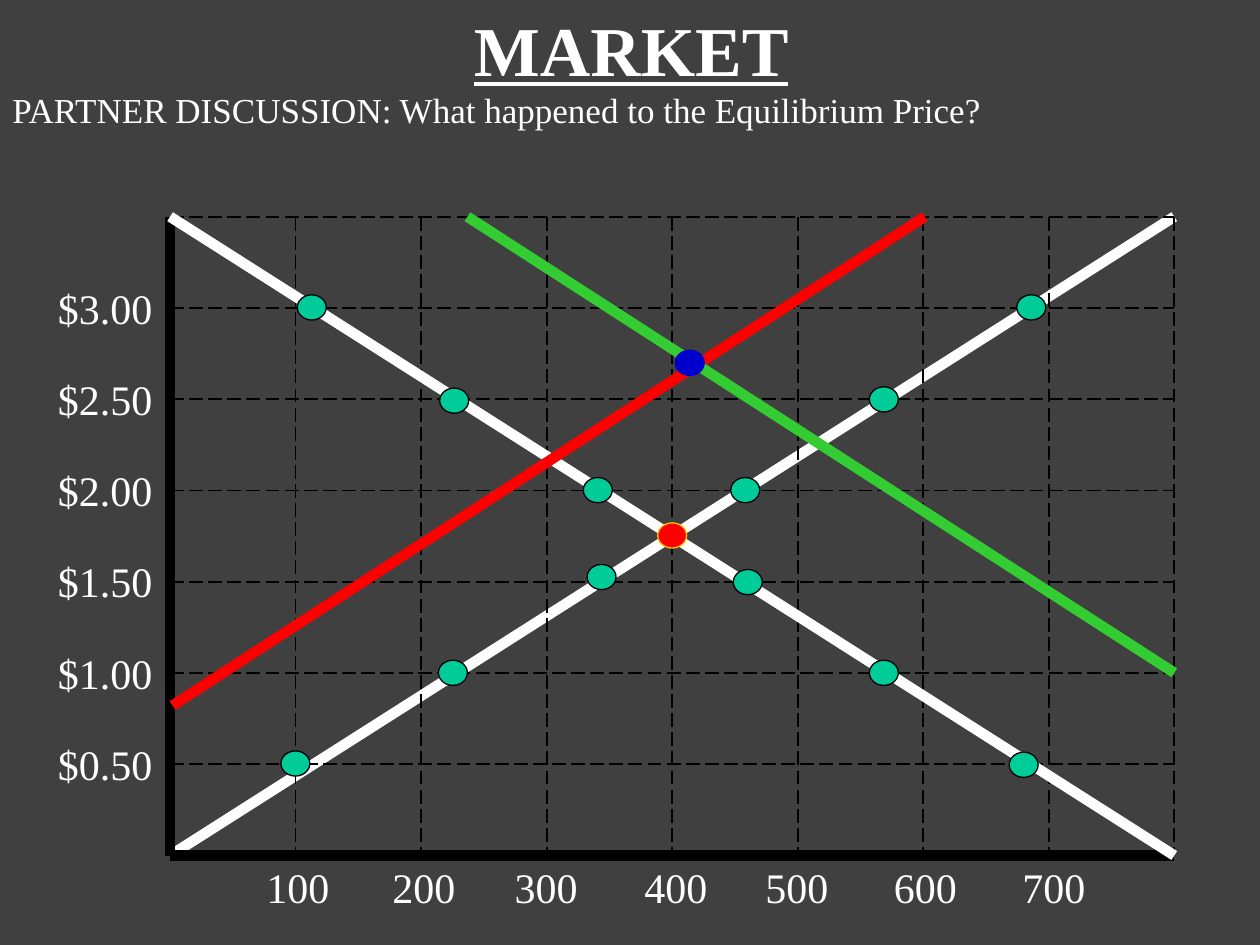
import pptx
import pptx.dml.color
import pptx.enum.dml
import pptx.enum.shapes
import pptx.enum.text
import pptx.oxml.ns
import pptx.util
from lxml import etree

Inches = pptx.util.Inches
Pt = pptx.util.Pt
ALIGN = pptx.enum.text.PP_ALIGN

COLORS = {
    "background": "404040",
    "text": "FFFFFF",
    "curve": "FFFFFF",
    "axis": "000000",
    "point": "00CC99",
    "old_equilibrium": "FF0000",
    "old_outline": "FFC000",
    "new_supply": "FF0000",
    "new_demand": "33CC33",
    "new_equilibrium": "0000CC",
}
LEFT, RIGHT, TOP, BOTTOM = 1.35, 9.32, 1.72, 6.79
ROWS, COLUMNS = 7, 8
ROW_STEP = (BOTTOM - TOP) / ROWS
COLUMN_STEP = (RIGHT - LEFT) / COLUMNS

LABEL_FONT = {"name": "Times New Roman", "size": Pt(24), "bold": False, "underline": False}
QUESTION_FONT = {**LABEL_FONT, "size": Pt(20)}
TITLE_FONT = {**LABEL_FONT, "size": Pt(40), "bold": True, "underline": True}
FRAME_FORMAT = {
    "word_wrap": True,
    "auto_size": pptx.enum.text.MSO_AUTO_SIZE.SHAPE_TO_FIT_TEXT,
}

PRICES = ["$3.00", "$2.50", "$2.00", "$1.50", "$1.00", "$0.50"]
QUANTITY_LEFTS = {
    "100": 1.85, "200": 2.85, "300": 3.82, "400": 4.85,
    "500": 5.81, "600": 6.83, "700": 7.85,
}
SUPPLY_POINTS = [(6.9, 3.07), (8.07, 2.34), (4.66, 4.48), (3.48, 5.24), (2.23, 5.96), (5.8, 3.79)]
DEMAND_POINTS = [(8.01, 5.97), (6.9, 5.24), (5.82, 4.52), (4.63, 3.79), (3.49, 3.08), (2.36, 2.34)]


def rgb(color):
    return pptx.dml.color.RGBColor.from_string(COLORS[color])


def set_values(target, values):
    for name, value in values.items():
        setattr(target, name, value)


def add_line(shapes, start, end, color, width=6, dash=None):
    line = shapes.add_connector(
        pptx.enum.shapes.MSO_CONNECTOR.STRAIGHT, *map(Inches, start + end)
    )
    line.line.color.rgb = rgb(color)
    set_values(line.line, {"width": Pt(width), "dash_style": dash})
    etree.SubElement(line._element.spPr, pptx.oxml.ns.qn("a:effectLst"))


def add_grid(slide):
    grid = slide.shapes.add_group_shape().shapes
    guide = {"color": "axis", "width": 1, "dash": pptx.enum.dml.MSO_LINE.LONG_DASH}
    axis = {"color": "axis"}
    for row in range(ROWS + 1):
        y = TOP + row * ROW_STEP
        add_line(grid, (LEFT, y), (RIGHT, y), **(axis if row == ROWS else guide))
    for column in range(COLUMNS + 1):
        x = LEFT + column * COLUMN_STEP
        add_line(grid, (x, TOP), (x, BOTTOM), **(axis if column == 0 else guide))


def add_point(slide, left, top, fill="point", outline="axis"):
    point = slide.shapes.add_shape(
        pptx.enum.shapes.MSO_SHAPE.OVAL,
        Inches(left), Inches(top), Inches(0.23), Inches(0.2),
    )
    point.shadow.inherit = False
    point.fill.solid()
    point.fill.fore_color.rgb = rgb(fill)
    point.line.color.rgb = rgb(outline)
    point.line.width = Pt(0.75)


def add_text(slide, text, box, font=LABEL_FONT, align=ALIGN.CENTER):
    frame = slide.shapes.add_textbox(*map(Inches, box)).text_frame
    set_values(frame, FRAME_FORMAT)
    paragraph = frame.paragraphs[0]
    paragraph.alignment = align
    run = paragraph.add_run()
    run.text = text
    set_values(run.font, font)
    run.font.color.rgb = rgb("text")


def add_curve(slide, start, end, points):
    add_line(slide.shapes, start, end, "curve")
    return [add_point(slide, left, top) for left, top in points]


def add_axis_labels(slide):
    for row, price in enumerate(PRICES):
        add_text(slide, price, (0.32, 2.19 + row * ROW_STEP, 1.03, 0.5))
    for quantity, left in QUANTITY_LEFTS.items():
        add_text(slide, quantity, (left, BOTTOM, 1.03, 0.5))


def main():
    deck = pptx.Presentation()
    set_values(deck, {"slide_width": Inches(10), "slide_height": Inches(7.5)})
    slide = deck.slides.add_slide(deck.slide_layouts[6])
    slide.background.fill.solid()
    slide.background.fill.fore_color.rgb = rgb("background")

    add_line(slide.shapes, (LEFT, BOTTOM), (RIGHT, TOP), "curve")
    add_grid(slide)
    for left, top in SUPPLY_POINTS:
        add_point(slide, left, top)
    add_text(slide, "MARKET", (0.01, 0, 10, 0.77), TITLE_FONT)
    add_axis_labels(slide)
    add_line(slide.shapes, (LEFT, TOP), (RIGHT, BOTTOM), "curve")
    for left, top in DEMAND_POINTS:
        add_point(slide, left, top)
    add_point(slide, 5.22, 4.15, "old_equilibrium", "old_outline")
    add_text(
        slide,
        "PARTNER DISCUSSION: What happened to the Equilibrium Price?",
        (0, 0.65, 10, 0.44), QUESTION_FONT, ALIGN.LEFT,
    )
    add_line(slide.shapes, (1.37, 5.6), (7.34, TOP), "new_supply")
    add_line(slide.shapes, (RIGHT, 5.34), (3.71, TOP), "new_demand")
    add_point(slide, 5.36, 2.78, "new_equilibrium", "new_equilibrium")
    deck.save("out.pptx")


if __name__ == "__main__":
    main()
